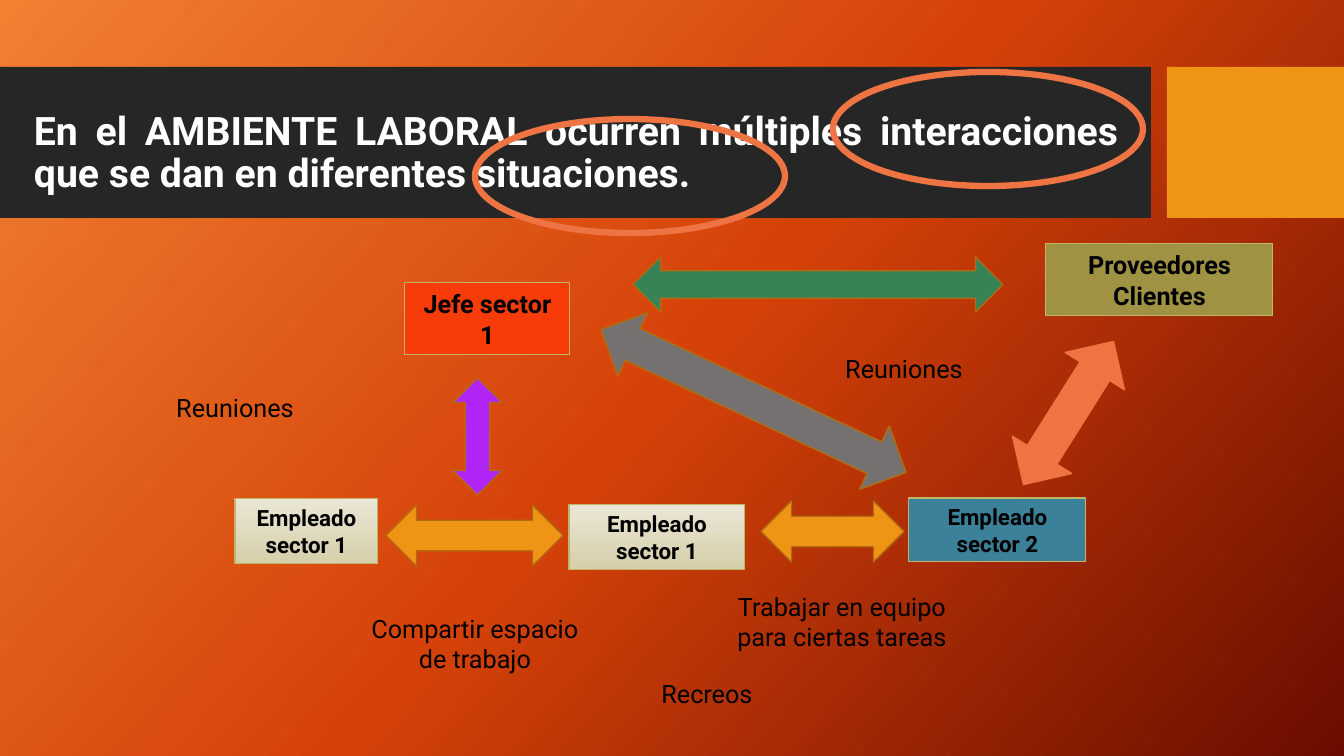
import copy
import pptx
import pptx.dml.color
import pptx.enum.shapes
import pptx.enum.text
import pptx.oxml.ns
import pptx.util

PX = 12192000 / 1344  # EMU per px
SHAPE = pptx.enum.shapes.MSO_SHAPE
ALIGN = pptx.enum.text.PP_ALIGN
MIDDLE = pptx.enum.text.MSO_ANCHOR.MIDDLE

THEME = {
    "font": "Roboto",
    "title": 28, "label": 18, "worker": 16,
    "white": "FFFFFF", "black": "000000", "band": "262626", "amber": "F09415",
    "coral": "EE7444", "arrow_edge": "B26D10", "box_edge": "C1B56B",
    "violet": "B124F5", "gray": "767171", "green": "388356",
    "red": "F73C09", "teal": "3A8199", "olive": "9F9242",
    "cream": ("EAE6D5", "D6CFAA"),
    "background": ("F18031", "D54209", "6A0D00"),
}


def paint(fill, owner, color, angle=90):
    """Solid fill for one colour, evenly spaced clockwise gradient for several."""
    if isinstance(color, str):
        fill.solid()
        fill.fore_color.rgb = pptx.dml.color.RGBColor.from_string(color)
        return
    fill.gradient()
    fill.gradient_angle = 360 - angle
    stops = next(owner.iter(pptx.oxml.ns.qn("a:gsLst")))
    while len(stops) < len(color):
        stops.append(copy.deepcopy(stops[0]))
    for i, (stop, shade) in enumerate(zip(fill.gradient_stops, color)):
        stop.position = i / (len(color) - 1)
        stop.color.rgb = pptx.dml.color.RGBColor.from_string(shade)


def write(frame, text, size, color, bold=False, align=ALIGN.CENTER):
    frame.word_wrap = True
    frame.vertical_anchor = MIDDLE
    paragraph = frame.paragraphs[0]
    paragraph.alignment = align
    run = paragraph.add_run()
    run.text = text
    run.font.name = THEME["font"]
    run.font.size = pptx.util.Pt(THEME[size])
    run.font.bold = bold
    run.font.color.rgb = pptx.dml.color.RGBColor.from_string(THEME[color])
    return paragraph


deck = pptx.Presentation()
deck.slide_width, deck.slide_height = round(1344 * PX), round(756 * PX)
slide = deck.slides.add_slide(deck.slide_layouts[6])
paint(slide.background.fill, slide.element, THEME["background"], 42)

# Title band
for left, width, color in [(0, 1151, "band"), (1167, 177, "amber")]:
    band = slide.shapes.add_shape(
        SHAPE.RECTANGLE, *(round(v * PX) for v in (left, 67, width, 151)))
    band.shadow.inherit = False
    paint(band.fill, band.element, THEME[color])
    band.line.fill.background()

title = slide.shapes.add_textbox(*(round(v * PX) for v in (24, 96, 1104, 115)))
heading = write(
    title.text_frame,
    "En el AMBIENTE LABORAL ocurren múltiples interacciones "
    "que se dan en diferentes situaciones.",
    "title", "white", True, ALIGN.JUSTIFY)
heading.line_spacing = 0.9

# Double arrows between the people: box, rotation, fill, edge
for box, rotation, color, edge in [
    ((386, 505, 177, 61), 0, "amber", "arrow_edge"),
    ((761, 501, 143, 61), 0, "amber", "arrow_edge"),
    ((419, 412, 117, 49), 270, "violet", "arrow_edge"),
    ((585, 366, 337, 70), 205.1, "gray", "arrow_edge"),
    ((633, 257, 370, 55), 180, "green", "arrow_edge"),
    ((984, 378, 169, 70), 302.2, "coral", "coral"),
]:
    arrow = slide.shapes.add_shape(
        SHAPE.LEFT_RIGHT_ARROW, *(round(v * PX) for v in box))
    arrow.shadow.inherit = False
    arrow.rotation = rotation
    paint(arrow.fill, arrow.element, THEME[color])
    paint(arrow.line.fill, arrow.element, THEME[edge])
    arrow.line.width = pptx.util.Pt(1)

# People boxes
for box, text, size, color in [
    ((405, 283, 165, 72), "Jefe sector 1", "label", "red"),
    ((1046, 244, 227, 72), "Proveedores Clientes", "label", "olive"),
    ((235, 499, 143, 65), "Empleado sector 1", "worker", "cream"),
    ((569, 505, 176, 65), "Empleado sector 1", "worker", "cream"),
    ((909, 498, 177, 64), "Empleado sector 2", "worker", "teal"),
]:
    person = slide.shapes.add_shape(
        SHAPE.RECTANGLE, *(round(v * PX) for v in box))
    person.shadow.inherit = False
    paint(person.fill, person.element, THEME[color])
    paint(person.line.fill, person.element, THEME["box_edge"])
    person.line.width = pptx.util.Pt(0.75)
    write(person.text_frame, text, size, "black", True)

# Situations
for left, top, height, text in [
    (350, 608, 71, "Compartir espacio de trabajo"),
    (717, 586, 71, "Trabajar en equipo para ciertas tareas"),
    (110, 387, 40, "Reuniones"),
    (582, 673, 40, "Recreos"),
    (779, 348, 40, "Reuniones"),
]:
    situation = slide.shapes.add_textbox(
        *(round(v * PX) for v in (left, top, 250, height)))
    write(situation.text_frame, text, "label", "black")

# Rings around the key words
for left, top in [(833, 72), (475, 119)]:
    ring = slide.shapes.add_shape(
        SHAPE.OVAL, *(round(v * PX) for v in (left, top, 310, 114)))
    ring.shadow.inherit = False
    ring.fill.background()
    paint(ring.line.fill, ring.element, THEME["coral"])
    ring.line.width = pptx.util.Pt(4.5)

deck.save("out.pptx")
